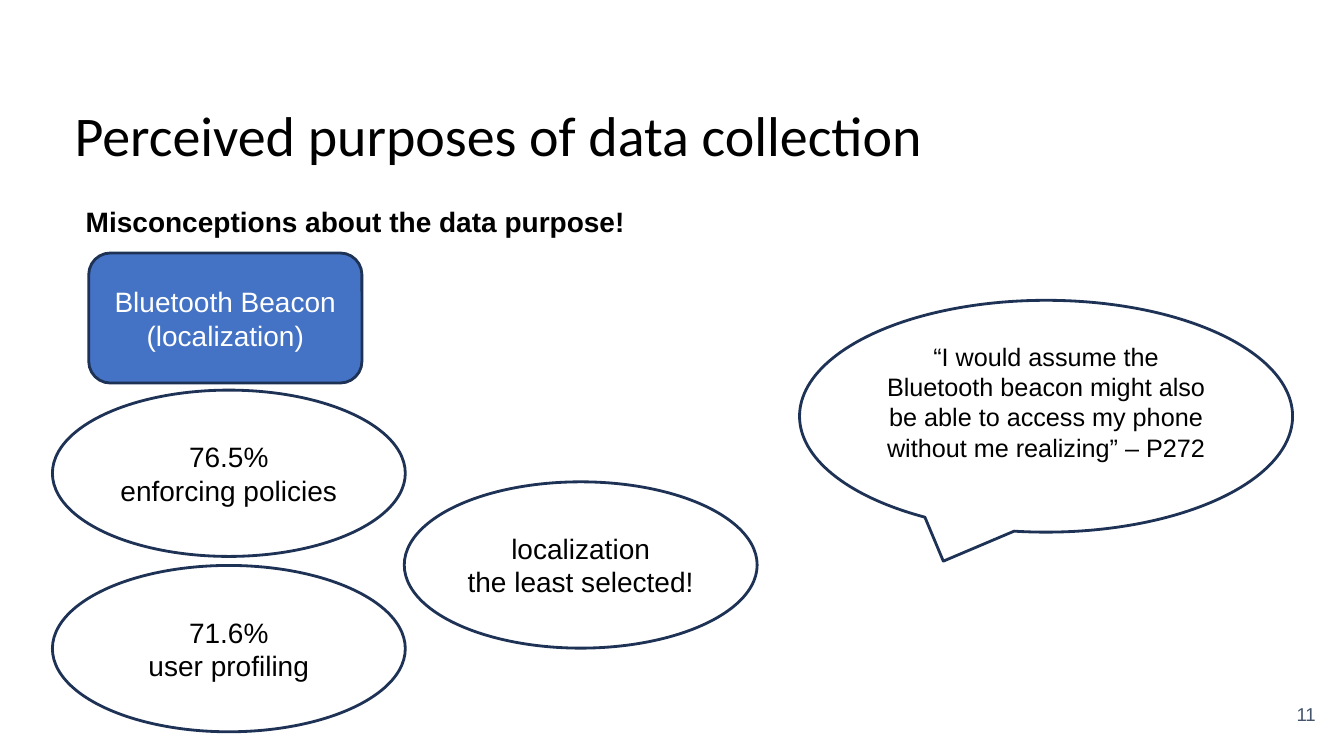
from pptx import Presentation, util as u
from pptx.dml.color import RGBColor
from pptx.enum import shapes, text

PX = 9144  # EMU per px, 100 px to the inch
BLACK, WHITE, NAVY, BLUE, SLATE = "000000", "FFFFFF", "1E3256", "4472C4", "44546A"
SHAPE, ALIGN, ANCHOR = shapes.MSO_SHAPE, text.PP_ALIGN, text.MSO_ANCHOR


def px(length):
    return u.Emu(length * PX)


def rgb(value):
    return RGBColor.from_string(value)


def set_insets(frame, left, top, right, bottom):
    frame.margin_left, frame.margin_top = px(left), px(top)
    frame.margin_right, frame.margin_bottom = px(right), px(bottom)


def write(frame, wording, size, color=BLACK, align=ALIGN.LEFT,
          anchor=ANCHOR.TOP, font="Arial", bold=False):
    """Fill a text frame, one paragraph for each line of wording."""
    frame.word_wrap = True
    frame.auto_size = text.MSO_AUTO_SIZE.NONE
    frame.vertical_anchor = anchor
    frame.text = wording
    for paragraph in frame.paragraphs:
        paragraph.alignment = align
        paragraph.font.name = font
        paragraph.font.size = u.Pt(size)
        paragraph.font.bold = bold
        paragraph.font.color.rgb = rgb(color)


def add_title(slide, wording, box):
    title = slide.shapes.title
    title.left, title.top, title.width, title.height = map(px, box)
    write(title.text_frame, wording, 40, font="Calibri")
    set_insets(title.text_frame, 13, 13, 13, 13)


def add_label(slide, wording, box, size, insets, **style):
    label = slide.shapes.add_textbox(*map(px, box))
    write(label.text_frame, wording, size, **style)
    set_insets(label.text_frame, *insets)
    return label


def add_bubble(slide, kind, wording, box, size=20, fill=None, color=BLACK):
    """Add an outlined shape with centred text."""
    bubble = slide.shapes.add_shape(kind, *map(px, box))
    bubble.shadow.inherit = False
    if fill:
        bubble.fill.solid()
        bubble.fill.fore_color.rgb = rgb(fill)
    else:
        bubble.fill.background()
    bubble.line.color.rgb = rgb(NAVY)
    bubble.line.width = u.Pt(2)
    write(bubble.text_frame, wording, size, color, ALIGN.CENTER, ANCHOR.MIDDLE)
    return bubble


def main():
    prs = Presentation()
    prs.slide_width, prs.slide_height = px(1333), px(750)
    slide = prs.slides.add_slide(prs.slide_layouts[5])

    # Title and heading
    add_title(slide, "Perceived purposes of data collection", (61, 87, 1657, 111))
    heading = add_label(slide, "Misconceptions about the data purpose!",
                        (61, 193, 825, 46), 20, (24, 5, 10, 5), bold=True)
    heading.text_frame.paragraphs[0].line_spacing = 1.15

    # Participant quote, its text lifted above the middle
    quote = add_bubble(
        slide, SHAPE.OVAL_CALLOUT,
        "“I would assume the Bluetooth beacon might also be able to access "
        "my phone without me realizing” – P272", (793, 298, 489, 230), size=18)
    set_insets(quote.text_frame, 10, 5, 10, 34)

    # Technology and the purposes people selected
    add_bubble(slide, SHAPE.ROUNDED_RECTANGLE, "Bluetooth Beacon\n(localization)",
               (88, 251, 271, 129), fill=BLUE, color=WHITE)
    for wording, left, top in (("76.5%\nenforcing policies", 52, 387),
                               ("71.6%\nuser profiling", 52, 561),
                               ("localization\nthe least selected!", 401, 478)):
        add_bubble(slide, SHAPE.OVAL, wording, (left, top, 350, 165))

    # Slide number
    add_label(slide, "11", (1235, 680, 80, 57), 13.3, (10, 10, 10, 10),
              color=SLATE, align=ALIGN.RIGHT, anchor=ANCHOR.MIDDLE)

    prs.save("out.pptx")


if __name__ == "__main__":
    main()
